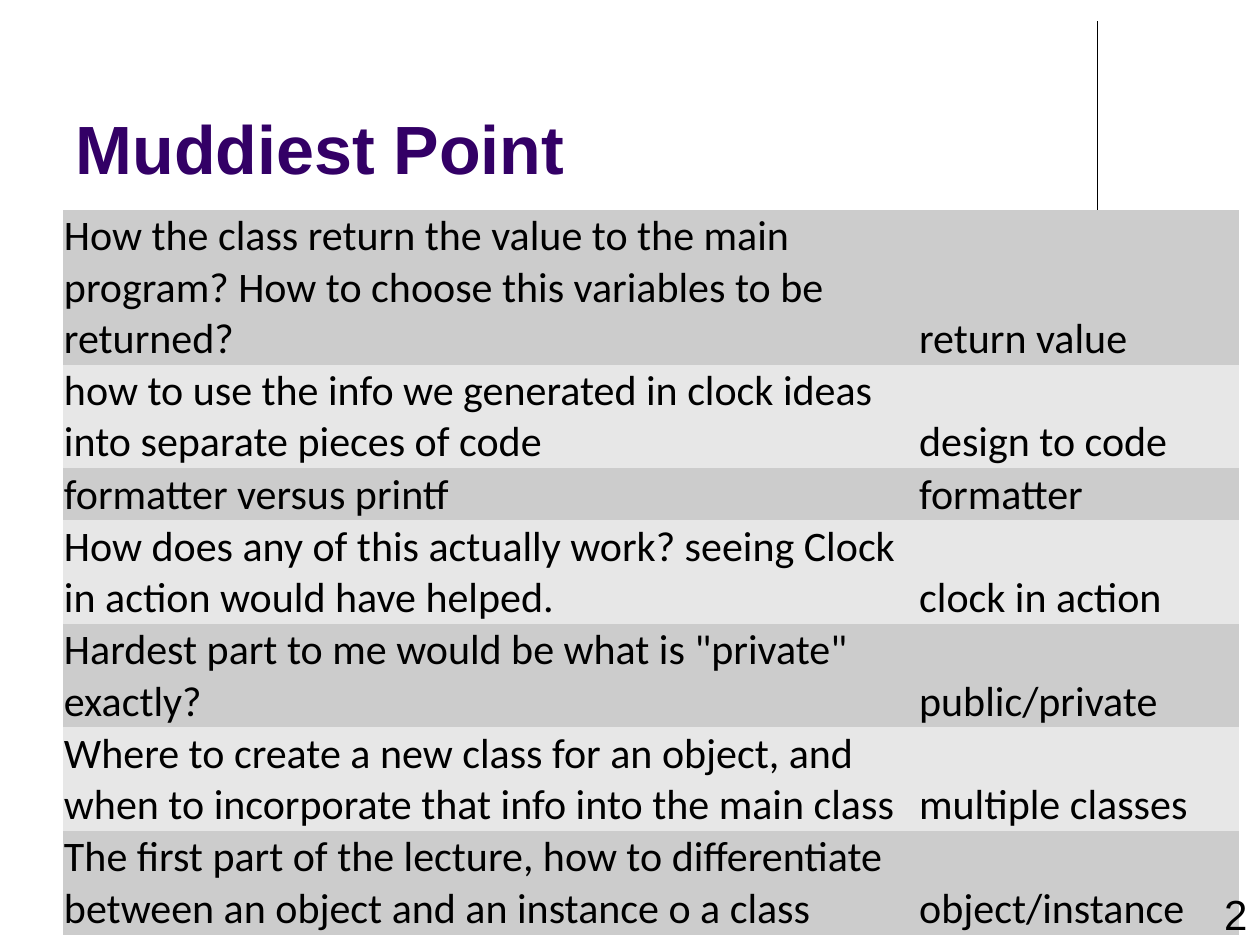
from lxml import etree
from pptx import Presentation
from pptx.dml.color import RGBColor
from pptx.enum.shapes import MSO_CONNECTOR
from pptx.enum.text import MSO_ANCHOR, MSO_AUTO_SIZE, PP_ALIGN
from pptx.oxml.ns import qn
from pptx.util import Cm, Pt

STRAIGHT = MSO_CONNECTOR.STRAIGHT
BOTTOM = MSO_ANCHOR.BOTTOM
NO_AUTOFIT = MSO_AUTO_SIZE.NONE
LEFT, RIGHT = PP_ALIGN.LEFT, PP_ALIGN.RIGHT
TITLE_ONLY = 5

COLORS = {
    "title": "330066",
    "text": "000000",
    "dark_band": "CCCCCC",
    "light_band": "E7E7E7",
}

QUESTIONS = [
    ("How the class return the value to the main program? "
     "How to choose this variables to be returned?", "return value", 3),
    ("how to use the info we generated in clock ideas into separate pieces of code",
     "design to code", 2),
    ("formatter versus printf", "formatter", 1),
    ("How does any of this actually work? seeing Clock in action would have helped.",
     "clock in action", 2),
    ('Hardest part to me would be what is "private" exactly?', "public/private", 2),
    ("Where to create a new class for an object, and when to incorporate "
     "that info into the main class", "multiple classes", 2),
    ("The first part of the lecture, how to differentiate between an object "
     "and an instance o a class", "object/instance", 2),
]


class SlideBuilder:
    heading_font = "Arial"
    table_font = "Calibri"
    body_size = 24
    line_height = 1.02
    cell_inset = 0.02

    def __init__(self, slide):
        self.slide = slide

    def color(self, name):
        return RGBColor.from_string(COLORS[name])

    def set_text(self, frame, text, font, size, color="text", bold=False, align=LEFT):
        frame.text = text
        frame.word_wrap = True
        paragraph = frame.paragraphs[0]
        paragraph.alignment = align
        for run in paragraph.runs:
            run.font.name = font
            run.font.size = Pt(size)
            run.font.bold = bold
            run.font.color.rgb = self.color(color)

    def title(self, text, left, top, width, height):
        heading = self.slide.shapes.title
        heading.left, heading.top = Cm(left), Cm(top)
        heading.width, heading.height = Cm(width), Cm(height)
        frame = heading.text_frame
        self.set_text(frame, text, self.heading_font, 39, "title", bold=True)
        frame.auto_size = NO_AUTOFIT
        frame.vertical_anchor = BOTTOM

    def rule(self, x, top, bottom):
        divider = self.slide.shapes.add_connector(
            STRAIGHT, Cm(x), Cm(top), Cm(x), Cm(bottom))
        divider.line.color.rgb = self.color("text")
        divider.line.width = Pt(0.75)
        etree.SubElement(divider._element.spPr, qn("a:effectLst"))

    def cell(self, cell, text, band):
        properties = cell._tc.get_or_add_tcPr()
        for side in ("a:lnL", "a:lnR", "a:lnT", "a:lnB"):
            border = etree.SubElement(properties, qn(side), w="0")
            etree.SubElement(border, qn("a:noFill"))
        cell.fill.solid()
        cell.fill.fore_color.rgb = self.color(band)
        cell.margin_left = cell.margin_right = cell.margin_top = Cm(self.cell_inset)
        cell.margin_bottom = 0
        cell.vertical_anchor = BOTTOM
        self.set_text(cell.text_frame, text, self.table_font, self.body_size)

    def table(self, questions, left, top, widths):
        heights = [Cm(lines * self.line_height + self.cell_inset)
                   for _, _, lines in questions]
        grid = self.slide.shapes.add_table(
            len(questions), len(widths), Cm(left), Cm(top),
            Cm(sum(widths)), sum(heights)).table
        grid.first_row = False
        grid.horz_banding = False
        for column, width in zip(grid.columns, widths):
            column.width = Cm(width)
        for index, (question, topic, _) in enumerate(questions):
            grid.rows[index].height = heights[index]
            band = "light_band" if index % 2 else "dark_band"
            for column, text in enumerate((question, topic)):
                self.cell(grid.cell(index, column), text, band)

    def page_number(self, text, left, top, width, height):
        frame = self.slide.shapes.add_textbox(
            Cm(left), Cm(top), Cm(width), Cm(height)).text_frame
        self.set_text(frame, text, self.heading_font, self.body_size, align=RIGHT)
        frame.vertical_anchor = BOTTOM


def main():
    deck = Presentation()
    deck.slide_width, deck.slide_height = Cm(25.4), Cm(19.05)
    slide = deck.slides.add_slide(deck.slide_layouts[TITLE_ONLY])
    builder = SlideBuilder(slide)
    builder.rule(22.12, 0.43, 4.65)
    builder.title("Muddiest Point", 1.27, 0.33, 20.95, 3.6)
    builder.table(QUESTIONS, 1.27, 4.23, (17.24, 6.47))
    builder.page_number("2", 19.48, 17.78, 5.92, 1.27)
    deck.save("out.pptx")


if __name__ == "__main__":
    main()
